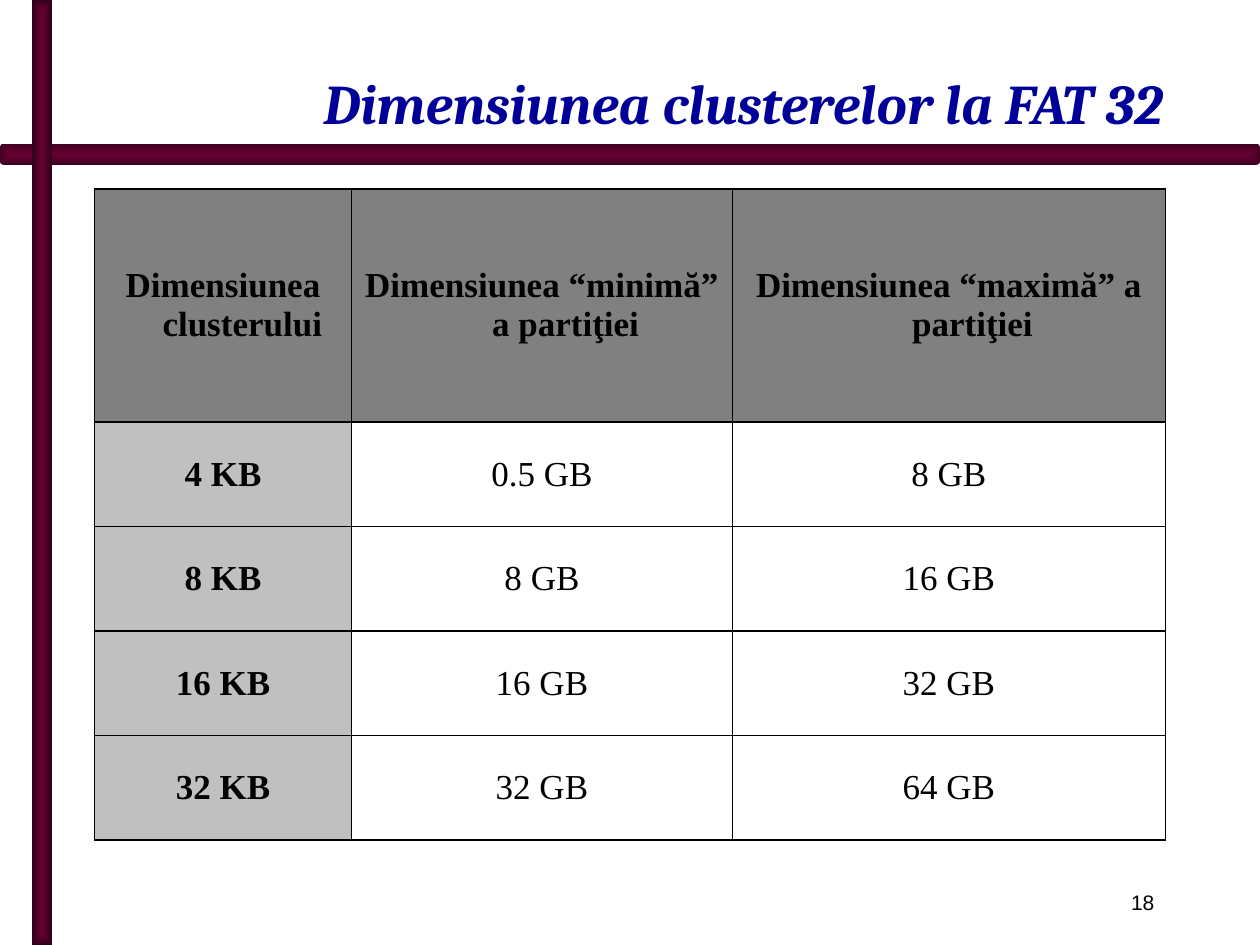
from dataclasses import dataclass

from lxml import etree
from pptx import Presentation
from pptx.dml.color import RGBColor
from pptx.enum.shapes import MSO_SHAPE
from pptx.enum.text import MSO_ANCHOR, MSO_AUTO_SIZE, PP_ALIGN
from pptx.oxml import parse_xml
from pptx.oxml.ns import qn
from pptx.util import Pt

RECT, ROUNDED = MSO_SHAPE.RECTANGLE, MSO_SHAPE.ROUNDED_RECTANGLE
MIDDLE, BOTTOM = MSO_ANCHOR.MIDDLE, MSO_ANCHOR.BOTTOM
CENTER, RIGHT = PP_ALIGN.CENTER, PP_ALIGN.RIGHT
NO_AUTOFIT = MSO_AUTO_SIZE.NONE
DRAWING_NS = "http://schemas.openxmlformats.org/drawingml/2006/main"


@dataclass(frozen=True)
class Theme:
    bar: str = "660033"
    bar_edge_across: str = "410020"
    bar_edge_down: str = "2F0018"
    title: str = "000099"
    text: str = "000000"
    header_fill: str = "808080"
    label_fill: str = "C0C0C0"
    title_font: str = "Cambria"
    table_font: str = "Times New Roman"
    number_font: str = "Arial"
    title_size: int = 32
    table_size: int = 20
    number_size: int = 12
    border: int = 1


THEME = Theme()

HEADERS = ["Dimensiunea clusterului ", "Dimensiunea “minimă” a partiţiei",
           "Dimensiunea “maximă” a partiţiei"]
SIZES = [
    ["4 KB", "0.5 GB", "8 GB"],
    ["8 KB", "8 GB", "16 GB"],
    ["16 KB", "16 GB", "32 GB"],
    ["32 KB", "32 GB", "64 GB"],
]
COLUMN_WIDTHS = [147, 217.5, 247.5]
HEADER_HEIGHT = 133.2


def in_points(box):
    return [Pt(length) for length in box]


def write(frame, text, align, font, size, color, bold=False, italic=False):
    para = frame.paragraphs[0]
    para.text = text
    para.alignment = align
    span = para.runs[0].font
    span.name, span.size = font, Pt(size)
    span.color.rgb = RGBColor.from_string(color)
    span.bold, span.italic = bold, italic
    return para


def add_bar(page, box, kind, edge):
    """Add a bar whose colour darkens from its centre to its edge."""
    bar = page.shapes.add_shape(kind, *in_points(box))
    bar.shadow.inherit = False
    bar.line.fill.background()
    bar.fill.background()
    properties = bar.fill._xPr
    gradient = parse_xml(
        f'<a:gradFill xmlns:a="{DRAWING_NS}" rotWithShape="1"><a:gsLst>'
        f'<a:gs pos="0"><a:srgbClr val="{THEME.bar}"/></a:gs>'
        f'<a:gs pos="100000"><a:srgbClr val="{edge}"/></a:gs></a:gsLst>'
        '<a:path path="shape"><a:fillToRect l="50000" t="50000" r="50000" b="50000"/>'
        '</a:path></a:gradFill>')
    properties.replace(properties.find(qn("a:noFill")), gradient)


def add_title(page, box, text):
    title = page.shapes.title
    title.left, title.top, title.width, title.height = in_points(box)
    frame = title.text_frame
    frame.word_wrap = True
    frame.auto_size = NO_AUTOFIT
    frame.vertical_anchor = BOTTOM
    write(frame, text, RIGHT, THEME.title_font, THEME.title_size,
          THEME.title, bold=True, italic=True)


def add_page_number(page, box, text):
    frame = page.shapes.add_textbox(*in_points(box)).text_frame
    frame.word_wrap = True
    write(frame, text, RIGHT, THEME.number_font, THEME.number_size, THEME.text)


def add_borders(cell):
    properties = cell._tc.get_or_add_tcPr()
    for position, side in enumerate(("lnL", "lnR", "lnT", "lnB")):
        line = etree.Element(qn(f"a:{side}"), w=str(Pt(THEME.border)))
        fill = etree.SubElement(line, qn("a:solidFill"))
        etree.SubElement(fill, qn("a:srgbClr"), val=THEME.text)
        properties.insert(position, line)


def style_cell(cell, text, fill):
    """Fill a cell; shaded cells are headings and so bold."""
    if fill:
        cell.fill.solid()
        cell.fill.fore_color.rgb = RGBColor.from_string(fill)
    else:
        cell.fill.background()
    add_borders(cell)
    cell.vertical_anchor = MIDDLE
    para = write(cell.text_frame, text, CENTER, THEME.table_font,
                 THEME.table_size, THEME.text, bold=bool(fill))
    hanging = para._p.get_or_add_pPr()
    hanging.set("marL", str(Pt(27)))
    hanging.set("indent", str(-Pt(27)))


def add_size_table(page, box):
    rows = [HEADERS] + SIZES
    table = page.shapes.add_table(len(rows), len(HEADERS), *in_points(box)).table
    total = sum(COLUMN_WIDTHS)
    for column, width in zip(table.columns, COLUMN_WIDTHS):
        column.width = Pt(box[2] * width / total)
    body_height = (box[3] - HEADER_HEIGHT) / len(SIZES)
    for r, texts in enumerate(rows):
        table.rows[r].height = Pt(body_height if r else HEADER_HEIGHT)
        for c, text in enumerate(texts):
            fill = THEME.header_fill if r == 0 else THEME.label_fill if c == 0 else None
            style_cell(table.cell(r, c), text, fill)


def main():
    deck = Presentation()
    deck.slide_width, deck.slide_height = Pt(720), Pt(540)
    page = deck.slides.add_slide(deck.slide_layouts[5])
    add_bar(page, (0, 82.2, 720, 12), ROUNDED, THEME.bar_edge_across)
    add_bar(page, (18, 0, 12, 540), RECT, THEME.bar_edge_down)
    add_page_number(page, (54, 504.7, 612.7, 21.6), "18")
    add_title(page, (60, 12, 612, 69), "Dimensiunea clusterelor la FAT 32")
    add_size_table(page, (54, 108, 612, 372))
    deck.save("out.pptx")


if __name__ == "__main__":
    main()
